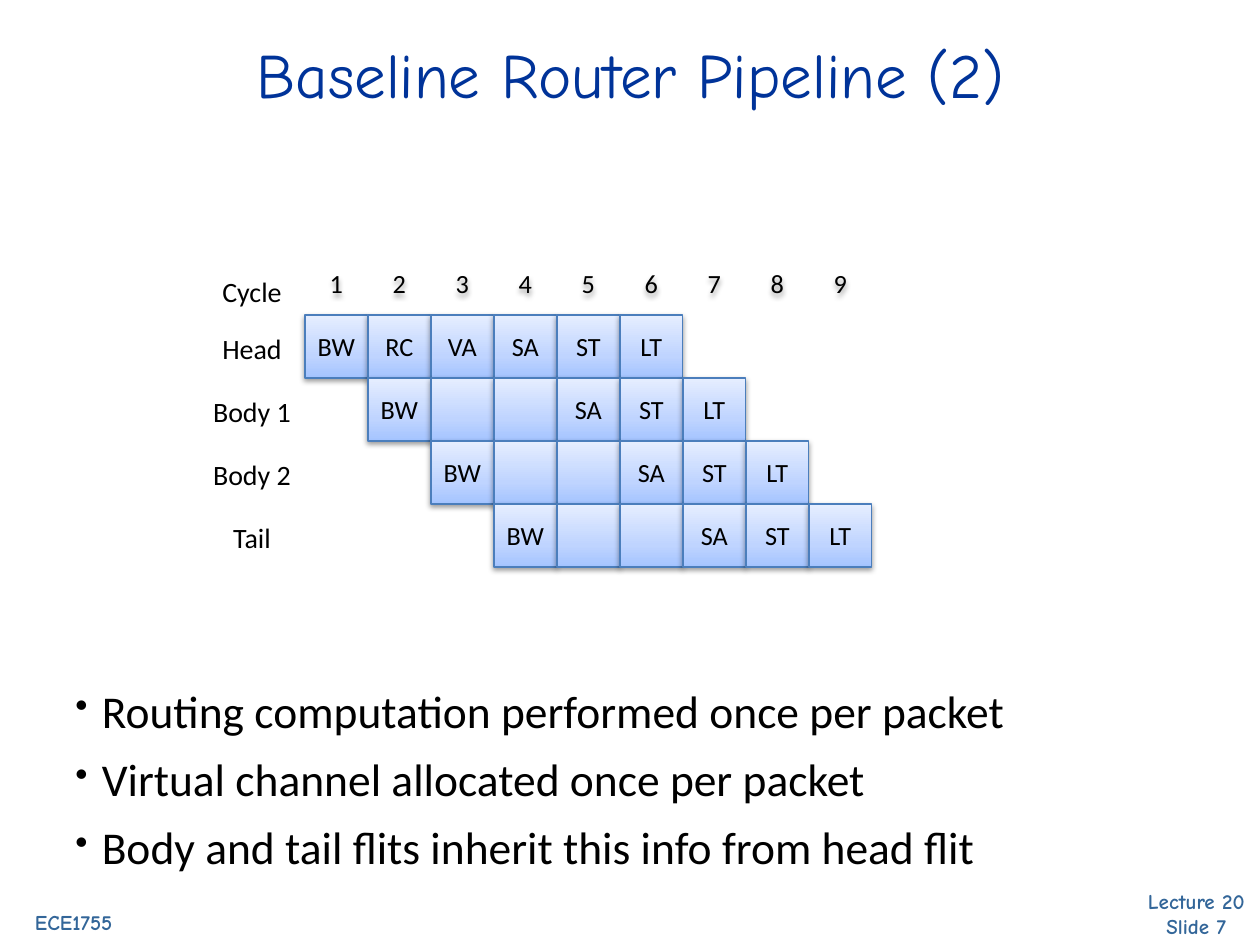
from pptx import Presentation
from pptx.dml.color import RGBColor as RGB
from pptx.enum.shapes import MSO_SHAPE as Shape
from pptx.enum.text import MSO_ANCHOR as Anchor, PP_ALIGN as Align
from pptx.oxml import parse_xml
from pptx.util import Inches, Pt

COLORS = {"title": "003399", "foot": "336699", "text": "000000", "edge": "4B7EBC",
          "low": "A4C4FF", "mid": "BFD4FF", "high": "E6EEFF"}
NS = 'xmlns:a="http://schemas.openxmlformats.org/drawingml/2006/main"'
STOPS = "".join(f'<a:gs pos="{pos}"><a:srgbClr val="{COLORS[name]}"/></a:gs>'
                for pos, name in ((0, "low"), (35000, "mid"), (100000, "high")))
GRAD = (f'<a:gradFill {NS} rotWithShape="1"><a:gsLst>{STOPS}</a:gsLst>'
        '<a:lin ang="16200000" scaled="0"/></a:gradFill>')
SHADOW = (f'<a:effectLst {NS}><a:outerShdw blurRad="{Pt(3.1)}" dist="{Pt(1.6)}" dir="5400000" '
          'rotWithShape="0"><a:srgbClr val="000000"><a:alpha val="38000"/></a:srgbClr>'
          '</a:outerShdw></a:effectLst>')
BULLET = (f'<a:buSzPct {NS} val="80000"/>', f'<a:buChar {NS} char="•"/>')

SIDE, LEFT, TOP = 0.5, 2.42, 2.5
HEAD = ["BW", "RC", "VA", "SA", "ST", "LT"]
BODY = ["BW", "", "", "SA", "ST", "LT"]
FLITS = [("Head", HEAD), ("Body 1", BODY), ("Body 2", BODY), ("Tail", BODY)]
POINTS = ["Routing computation performed once per packet",
          "Virtual channel allocated once per packet",
          "Body and tail flits inherit this info from head flit"]


def write(frame, lines, size=15, font="Calibri", color="text", bold=False,
          align=Align.CENTER, anchor=Anchor.TOP, pad=0.1, before=0, bullet=False):
    """Fill a text frame with one paragraph per line."""
    frame.word_wrap = True
    frame.vertical_anchor = anchor
    frame.margin_left = frame.margin_right = Inches(pad)
    for i, line in enumerate(lines):
        para = frame.paragraphs[0] if i == 0 else frame.add_paragraph()
        para.alignment = align
        para.space_before = Pt(before)
        run = para.add_run()
        run.text = line
        run.font.size, run.font.name, run.font.bold = Pt(size), font, bold
        run.font.color.rgb = RGB.from_string(COLORS[color])
        if bullet:
            para.line_spacing = Pt(24)
            props = para._p.get_or_add_pPr()
            props.set("marL", str(Inches(0.21)))
            props.set("indent", str(-Inches(0.21)))
            for xml in BULLET:
                props.append(parse_xml(xml))


class Deck:
    """Holds the file, the current slide and the style of its elements."""

    def __init__(self):
        self.prs = Presentation()
        self.prs.slide_width, self.prs.slide_height = Inches(10), Inches(7.5)
        self.slide = self.prs.slides.add_slide(self.prs.slide_layouts[6])

    def label(self, box, *lines, **style):
        """Add a text box."""
        item = self.slide.shapes.add_textbox(*map(Inches, box))
        write(item.text_frame, lines, **style)
        return item

    def cycle(self, col):
        """Add a cycle number above its column."""
        box = LEFT + col * SIDE, TOP - SIDE, SIDE, SIDE
        item = self.label(box, str(col + 1), anchor=Anchor.MIDDLE, pad=0)
        item._element.spPr.append(parse_xml(SHADOW))

    def stage(self, row, col, name):
        """Add one pipeline stage."""
        box = LEFT + col * SIDE, TOP + row * SIDE, SIDE, SIDE
        item = self.slide.shapes.add_shape(Shape.RECTANGLE, *map(Inches, box))
        item.line.color.rgb = RGB.from_string(COLORS["edge"])
        item.line.width = Pt(0.75)
        props = item._element.spPr
        props.insert(2, parse_xml(GRAD))
        props.append(parse_xml(SHADOW))
        if name:
            write(item.text_frame, [name], anchor=Anchor.MIDDLE, pad=0)


def main():
    """Build the slide and save it."""
    deck = Deck()
    foot = dict(size=12, font="Comic Neue", color="foot", bold=True, before=6)
    deck.label((8.83, 7, 1.33, 0.5), "Lecture 20 Slide 7", **foot)
    deck.label((-0.08, 7.17, 1.33, 0.3), "ECE1755", **foot)
    deck.label((0.38, 0.25, 9.25, 0.67), "Baseline Router Pipeline (2)",
               size=36, font="Comic Neue", color="title", anchor=Anchor.MIDDLE)
    deck.label((0.5, 5.47, 9, 1.78), *POINTS, size=26, align=Align.LEFT,
               before=15, bullet=True)
    deck.label((1.5, 2.13, 1, 0.37), "Cycle", size=16)
    for col in range(9):
        deck.cycle(col)
    for row, (flit, names) in enumerate(FLITS):
        deck.label((1.5, TOP + 0.08 + row * SIDE, 1, 0.37), flit, size=16)
        for step, name in enumerate(names):
            deck.stage(row, row + step, name)
    deck.prs.save("out.pptx")


if __name__ == "__main__":
    main()
